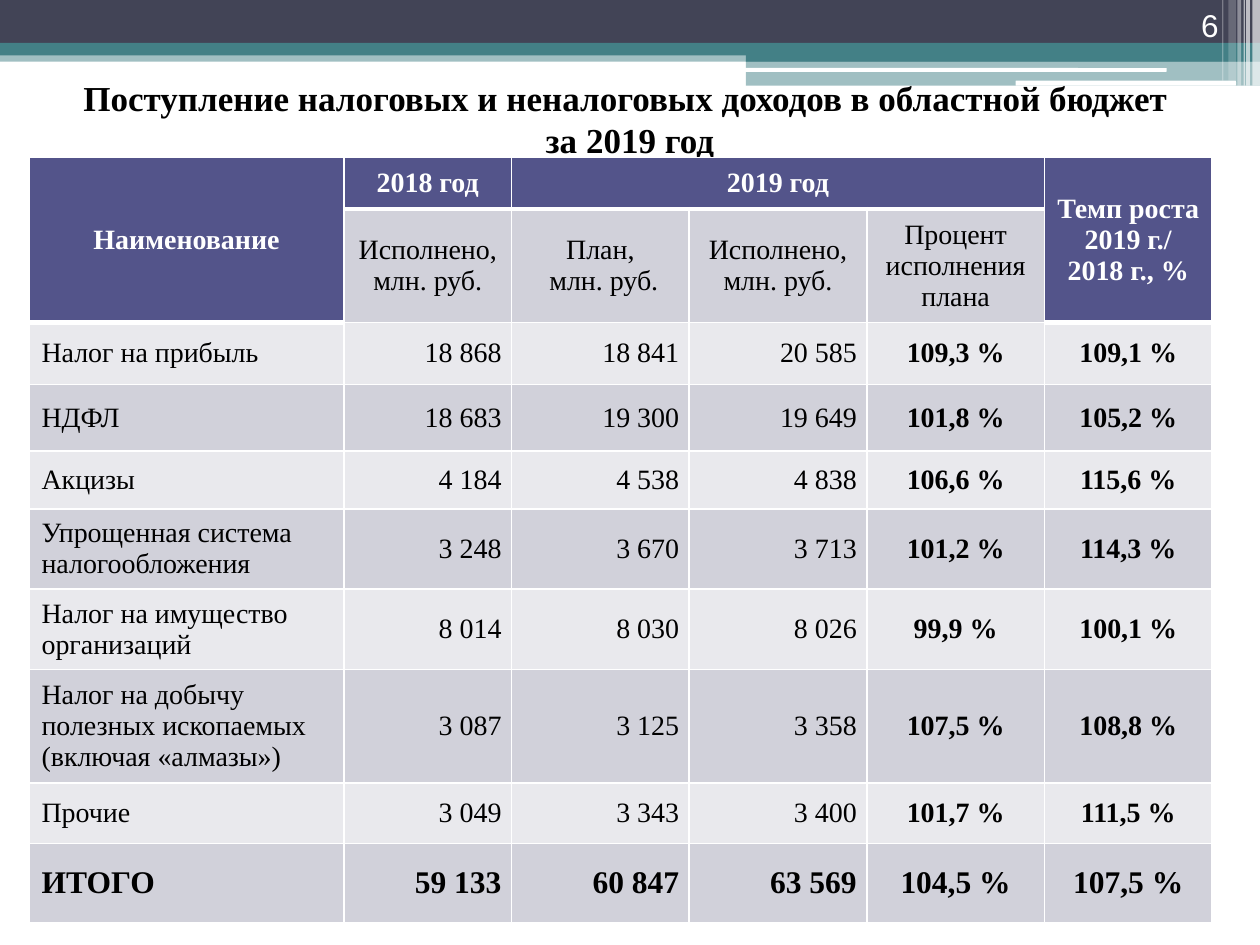
from lxml.etree import SubElement
from pptx import Presentation
from pptx.dml.color import RGBColor
from pptx.enum.shapes import MSO_SHAPE as Shape
from pptx.enum.text import MSO_ANCHOR as Anchor, PP_ALIGN as Align
from pptx.oxml.ns import qn
from pptx.util import Inches, Pt


def paint(fill, color, opacity=100):
    fill.solid()
    fill.fore_color.rgb = RGBColor.from_string(color)
    if opacity < 100:
        tint = fill._xPr.find(qn("a:solidFill"))[0]
        SubElement(tint, qn("a:alpha"), val=str(opacity * 1000))


def write(frame, text, size, color, bold, align, font="Times New Roman"):
    frame.text = text
    frame.word_wrap = True
    for paragraph in frame.paragraphs:
        paragraph.alignment = align
        for run in paragraph.runs:
            run.font.name = font
            run.font.size = Pt(size)
            run.font.bold = bold
            run.font.color.rgb = RGBColor.from_string(color)


WHITE, BLACK, TEAL, NAVY = "FFFFFF", "000000", "438086", "424456"
HEADER, DARK_BAND, LIGHT_BAND = "53548A", "D1D1DA", "E9E9ED"

prs = Presentation()
prs.slide_width, prs.slide_height = Inches(10), Inches(7.5)
slide = prs.slides.add_slide(prs.slide_layouts[6])

banner = [
    (Shape.RECTANGLE, 0, 0.4, 10, 0.09, TEAL, 50),
    (Shape.RECTANGLE, 0, 0, 10, 0.34, NAVY, 100),
    (Shape.RECTANGLE, 0, 0.34, 10, 0.1, TEAL, 100),
    (Shape.RECTANGLE, 5.92, 0.39, 4.08, 0.1, TEAL, 100),
    (Shape.RECTANGLE, 5.92, 0.48, 4.08, 0.2, TEAL, 50),
    (Shape.ROUNDED_RECTANGLE, 5.91, 0.54, 3.35, 0.03, WHITE, 100),
    (Shape.ROUNDED_RECTANGLE, 8.06, 0.64, 1.75, 0.04, WHITE, 100),
    (Shape.RECTANGLE, 9.94, 0, 0.06, 0.68, WHITE, 65),
    (Shape.RECTANGLE, 9.89, 0, 0.03, 0.68, WHITE, 65),
    (Shape.RECTANGLE, 9.87, 0, 0.01, 0.68, WHITE, 60),
    (Shape.RECTANGLE, 9.82, 0, 0.03, 0.68, WHITE, 40),
    (Shape.RECTANGLE, 9.75, 0, 0.06, 0.64, WHITE, 20),
    (Shape.RECTANGLE, 9.7, 0, 0.01, 0.64, WHITE, 30),
]
for kind, left, top, width, height, color, opacity in banner:
    strip = slide.shapes.add_shape(kind, Inches(left), Inches(top), Inches(width), Inches(height))
    strip.shadow.inherit = False
    strip.line.fill.background()
    paint(strip.fill, color, opacity)

title = slide.shapes.add_textbox(Inches(0), Inches(0.55), Inches(10), Inches(0.78)).text_frame
title.vertical_anchor = Anchor.MIDDLE
write(title, "Поступление налоговых и неналоговых доходов в областной бюджет \vза 2019 год",
      20, BLACK, True, Align.CENTER)

rows = [
    ["Наименование", "2018 год", "2019 год", "", "", "Темп роста\n2019 г./ 2018 г., %"],
    ["", "Исполнено, млн. руб.", "План,\n млн. руб.", "Исполнено, млн. руб.",
     "Процент исполнения плана", ""],
    ["Налог на прибыль", "18 868", "18 841", "20 585", "109,3 %", "109,1 %"],
    ["НДФЛ", "18 683", "19 300", "19 649", "101,8 %", "105,2 %"],
    ["Акцизы", "4 184", "4 538", "4 838", "106,6 %", "115,6 %"],
    ["Упрощенная система налогообложения", "3 248", "3 670", "3 713", "101,2 %", "114,3 %"],
    ["Налог на имущество организаций", "8 014", "8 030", "8 026", "99,9 %", "100,1 %"],
    ["Налог на добычу полезных ископаемых (включая «алмазы»)",
     "3 087", "3 125", "3 358", "107,5 %", "108,8 %"],
    ["Прочие", "3 049", "3 343", "3 400", "101,7 %", "111,5 %"],
    ["ИТОГО", "59 133", "60 847", "63 569", "104,5 %", "107,5 %"],
]
col_widths = [2.5, 1.33, 1.41, 1.41, 1.41, 1.33]
row_heights = [0.41, 0.84, 0.49, 0.53, 0.46, 0.59, 0.64, 0.84, 0.48, 0.63]
total_row = len(rows) - 1

revenue = slide.shapes.add_table(len(rows), len(col_widths), Inches(0.23), Inches(1.25),
                                 Inches(sum(col_widths)), Inches(sum(row_heights))).table
revenue.first_row = revenue.horz_banding = False
for column, width in zip(revenue.columns, col_widths):
    column.width = Inches(width)
for row, height in zip(revenue.rows, row_heights):
    row.height = Inches(height)

for r, values in enumerate(rows):
    for c, value in enumerate(values):
        cell = revenue.cell(r, c)
        is_header = r == 0 or (r == 1 and c in (0, 5))
        below_header = r == 1 or (r == 2 and c in (0, 5))
        edges = {"L": 1, "R": 1, "T": 3 if below_header else 1, "B": 3 if is_header else 1}
        for side, weight in edges.items():
            border = SubElement(cell._tc.get_or_add_tcPr(), qn(f"a:ln{side}"), w=str(Pt(weight)))
            SubElement(SubElement(border, qn("a:solidFill")), qn("a:srgbClr"), val=WHITE)
        band = DARK_BAND if r % 2 else LIGHT_BAND
        paint(cell.fill, HEADER if is_header else band)
        cell.vertical_anchor = Anchor.MIDDLE
        align = Align.CENTER
        if r > 1 and c == 0:
            align = Align.LEFT
        elif r > 1:
            cell.margin_left = cell.margin_top = cell.margin_bottom = Inches(0)
            cell.margin_right = Inches(0.08 if c < 4 else 0)
            align = Align.RIGHT if c < 4 else Align.CENTER
        bold = is_header or r == total_row or (r > 1 and c > 3)
        write(cell.text_frame, value, 18 if r == total_row else 16,
              WHITE if is_header else BLACK, bold, align)

for first, last in [((0, 0), (1, 0)), ((0, 2), (0, 4)), ((0, 5), (1, 5))]:
    revenue.cell(*first).merge(revenue.cell(*last))

page_number = slide.shapes.add_textbox(Inches(8.94), Inches(0), Inches(0.83), Inches(0.4)).text_frame
page_number.vertical_anchor = Anchor.BOTTOM
write(page_number, "6", 18, WHITE, False, Align.RIGHT, "Arial")

prs.save("out.pptx")
